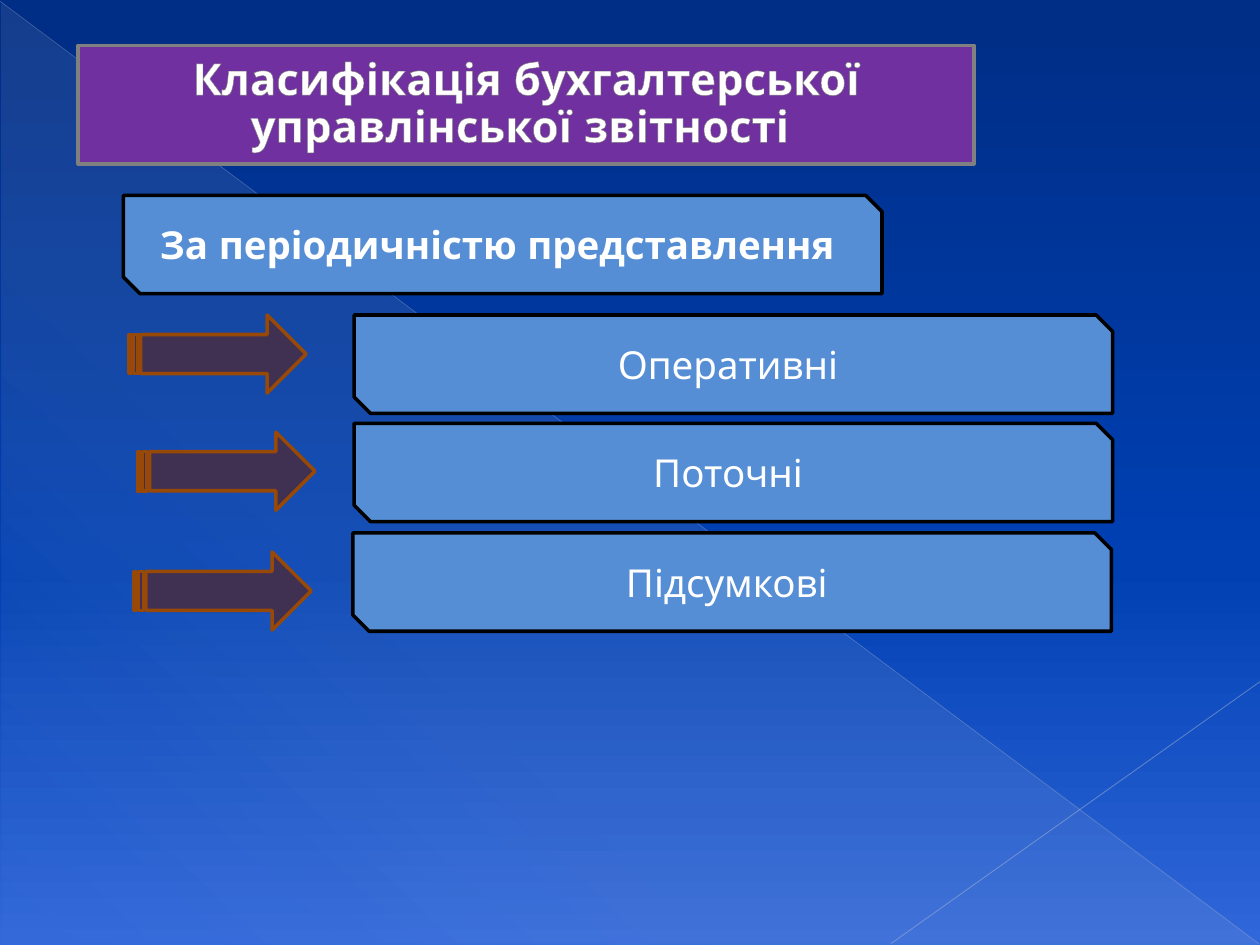
import lxml.etree
import pptx
import pptx.dml.color
import pptx.enum.dml
import pptx.enum.shapes
import pptx.enum.text
import pptx.oxml.ns
import pptx.util
from pptx.util import Inches

SHAPES = pptx.enum.shapes.MSO_SHAPE
qn = pptx.oxml.ns.qn
FONT = "Quicksand"


def color(hex_string):
    return pptx.dml.color.RGBColor.from_string(hex_string)


def add_color(parent, hex_string, opacity=100):
    value = lxml.etree.SubElement(parent, qn("a:srgbClr"), val=hex_string)
    if opacity < 100:
        lxml.etree.SubElement(value, qn("a:alpha"), val=str(opacity * 1000))


def set_gradient(fill, owner, stops, angle):
    fill.gradient()
    gradient = next(owner.iter(qn("a:gradFill")))
    stop_list = gradient.find(qn("a:gsLst"))
    for stop in list(stop_list):
        stop_list.remove(stop)
    for position, hex_string, opacity in stops:
        stop = lxml.etree.SubElement(stop_list, qn("a:gs"), pos=str(position * 1000))
        add_color(stop, hex_string, opacity)
    direction = gradient.find(qn("a:lin"))
    direction.set("ang", str(angle * 60000))
    direction.set("scaled", "0")


def set_style(shape, fill, line, width=2):
    shape.fill.solid()
    shape.fill.fore_color.rgb = color(fill)
    shape.line.color.rgb = color(line)
    shape.line.width = pptx.util.Pt(width)


def write_text(shape, text, size=22, bold=False, spacing=1.0, outline=None):
    frame = shape.text_frame
    frame.word_wrap = True
    frame.auto_size = pptx.enum.text.MSO_AUTO_SIZE.NONE
    frame.vertical_anchor = pptx.enum.text.MSO_ANCHOR.MIDDLE
    paragraph = frame.paragraphs[0]
    paragraph.alignment = pptx.enum.text.PP_ALIGN.CENTER
    paragraph.line_spacing = spacing
    run = paragraph.add_run()
    run.text = text
    run.font.name = FONT
    run.font.size = pptx.util.Pt(size)
    run.font.bold = bold
    run.font.color.rgb = color("FFFFFF")
    if outline:
        edge = lxml.etree.Element(qn("a:ln"), w=str(pptx.util.Pt(0.83)))
        add_color(lxml.etree.SubElement(edge, qn("a:solidFill")), outline)
        run.font._element.insert(0, edge)


def add_shape(slide, preset, left, top, width, height):
    shape = slide.shapes.add_shape(
        preset, Inches(left), Inches(top), Inches(width), Inches(height))
    shape.shadow.inherit = False
    return shape


def add_thin_line(slide, start, end, hex_string, width, opacity):
    line = slide.shapes.add_connector(
        pptx.enum.shapes.MSO_CONNECTOR.STRAIGHT,
        *(Inches(value) for value in (*start, *end)))
    line.line.color.rgb = color(hex_string)
    line.line.width = pptx.util.Pt(width)
    properties = line._element.spPr
    value = next(properties.iter(qn("a:srgbClr")))
    lxml.etree.SubElement(value, qn("a:alpha"), val=str(opacity * 1000))
    lxml.etree.SubElement(properties, qn("a:effectLst"))


def add_backdrop(slide, width, height):
    set_gradient(slide.background.fill, slide._element,
                 [(0, "002D85", 100), (60, "0040B3", 100), (100, "3067DA", 100)], 90)
    glow = add_shape(slide, SHAPES.RIGHT_TRIANGLE, 0.01, 0.02, width - 0.01, height - 0.02)
    set_gradient(glow.fill, glow._element,
                 [(0, "EEECE1", 10), (70, "EEECE1", 8), (100, "EEECE1", 1)], 133)
    glow.line.fill.background()
    bottom = height - 0.01
    add_thin_line(slide, (0, 0.01), (width - 0.01, bottom), "ADB6CE", 0.39, 35)
    add_thin_line(slide, (width, 5.41), (7.07, bottom), "B6BED3", 0.47, 45)


def add_title(slide, text, left, top, width, height):
    title = slide.shapes.title
    slide.shapes._spTree.append(title._element)
    title.left, title.top = Inches(left), Inches(top)
    title.width, title.height = Inches(width), Inches(height)
    set_style(title, "7030A0", "808080")
    write_text(title, text, size=25, bold=True, spacing=0.9, outline="7D7D7D")


def add_label(slide, text, left, top, bold=False):
    label = add_shape(slide, SHAPES.SNIP_2_DIAG_RECTANGLE, left, top, 6.02, 0.78)
    set_style(label, "558ED5", "000000")
    write_text(label, text, bold=bold)


def add_report_type(slide, text, left, top, arrow_left, arrow_drop):
    add_label(slide, text, left, top)
    arrow = add_shape(slide, SHAPES.STRIPED_RIGHT_ARROW,
                      arrow_left, top + arrow_drop, 1.41, 0.62)
    set_style(arrow, "403152", "984807")


def main():
    deck = pptx.Presentation()
    deck.slide_width, deck.slide_height = Inches(10), Inches(7.5)
    slide = deck.slides.add_slide(deck.slide_layouts.get_by_name("Title Only"))
    add_backdrop(slide, 10, 7.5)
    add_title(slide, "Класифікація бухгалтерської управлінської звітності ",
              0.62, 0.36, 7.11, 0.94)
    add_label(slide, "За періодичністю представлення ", 0.98, 1.55, bold=True)
    report_types = [
        ("Оперативні ", 2.81, 2.5, 1.02, 0),
        ("Поточні ", 2.81, 3.36, 1.09, 0.07),
        ("Підсумкові ", 2.8, 4.23, 1.06, 0.15),
    ]
    for report_type in report_types:
        add_report_type(slide, *report_type)
    deck.save("out.pptx")


if __name__ == "__main__":
    main()
